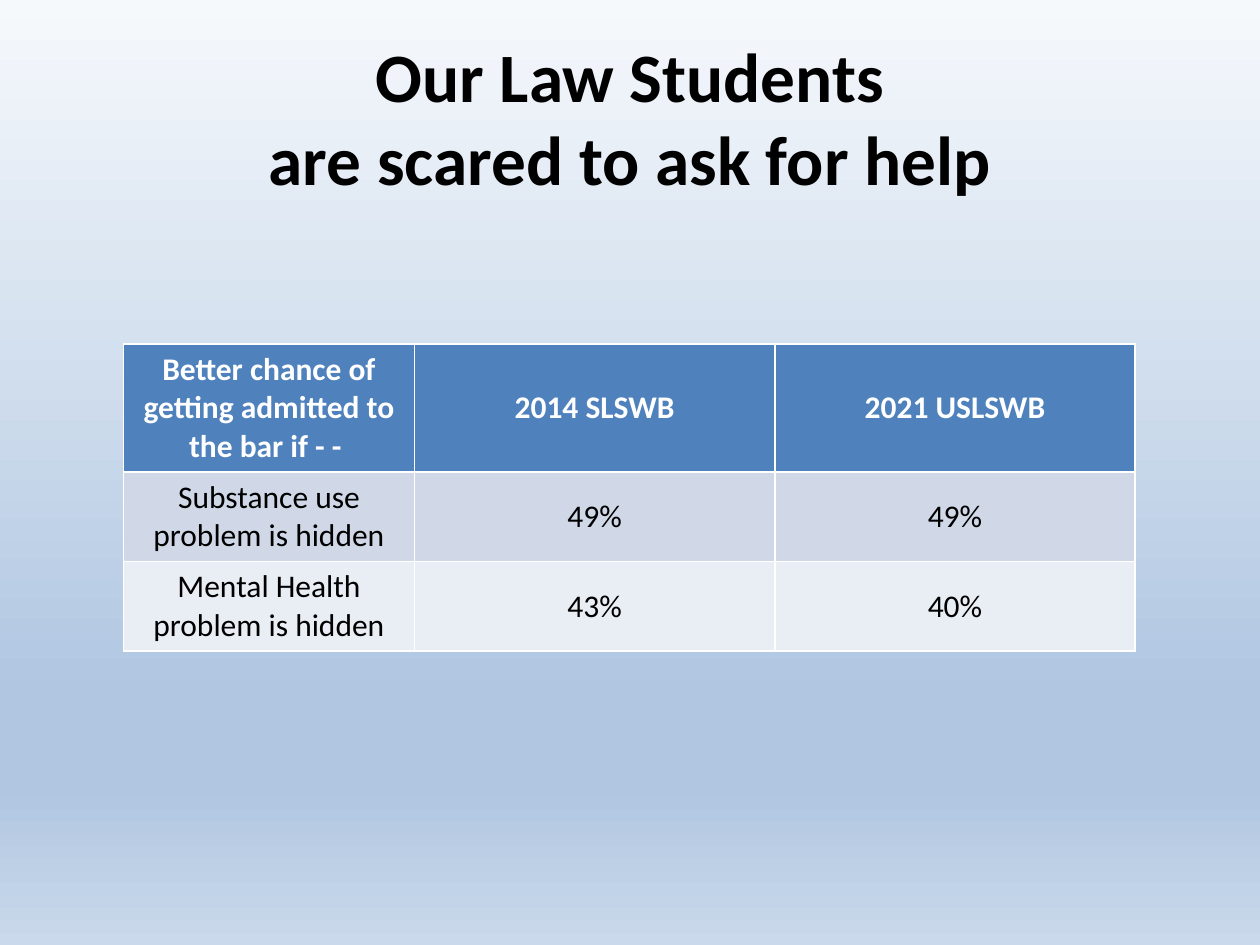
from lxml import etree
from pptx import Presentation
from pptx.dml.color import RGBColor
from pptx.enum import text
from pptx.oxml.ns import qn
from pptx.util import Inches, Pt

TITLE = "Our Law Students\vare scared to ask for help"
ROWS = [
    ("Better chance of getting admitted to the bar if - - ", "2014 SLSWB", "2021 USLSWB"),
    ("Substance use problem is hidden", "49%", "49%"),
    ("Mental Health problem is hidden", "43%", "40%"),
]
COL_WIDTHS = (2.31, 2.86, 2.86)
ROW_HEIGHT = 0.69

BLACK = RGBColor(0x00, 0x00, 0x00)
WHITE = RGBColor(0xFF, 0xFF, 0xFF)
ROW_FILLS = (
    RGBColor(0x4F, 0x81, 0xBD),
    RGBColor(0xD0, 0xD8, 0xE8),
    RGBColor(0xE9, 0xED, 0xF4),
)
SKY_TOP = RGBColor(0xF6, 0xF9, 0xFC)
SKY_MIDDLE = RGBColor(0xB0, 0xC6, 0xE1)
SKY_BOTTOM = RGBColor(0xCA, 0xD9, 0xEB)
SKY_STOPS = ((0, SKY_TOP), (74, SKY_MIDDLE), (83, SKY_MIDDLE), (100, SKY_BOTTOM))


def style(p, size, color, bold):
    p.alignment = text.PP_ALIGN.CENTER
    p.font.name = "Calibri"
    p.font.size = Pt(size)
    p.font.bold = bold
    p.font.color.rgb = color


def paint_background(s):
    fill = s.background.fill
    fill.gradient()
    fill.gradient_angle = 270
    stops = next(s.element.iter(qn("a:gsLst")))
    for stop in list(stops):
        stops.remove(stop)
    for percent, color in SKY_STOPS:
        stop = etree.SubElement(stops, qn("a:gs"), pos=str(percent * 1000))
        etree.SubElement(stop, qn("a:srgbClr"), val=str(color))


def add_title(s):
    sp = s.shapes.title
    sp.left, sp.top, sp.width, sp.height = map(Inches, (0.5, 0.3, 9, 1.25))
    tf = sp.text_frame
    tf.text = TITLE
    tf.auto_size = text.MSO_AUTO_SIZE.NONE
    tf.vertical_anchor = text.MSO_ANCHOR.MIDDLE
    style(tf.paragraphs[0], 39.6, BLACK, True)


def add_survey_table(s):
    table = s.shapes.add_table(
        len(ROWS), len(COL_WIDTHS), Inches(0.98), Inches(2.73),
        Inches(sum(COL_WIDTHS)), Inches(ROW_HEIGHT * len(ROWS)),
    ).table
    for column, width in zip(table.columns, COL_WIDTHS):
        column.width = Inches(width)
    for i, (row, values) in enumerate(zip(table.rows, ROWS)):
        row.height = Inches(ROW_HEIGHT)
        header = i == 0
        for cell, value in zip(row.cells, values):
            cell.text = value
            cell.vertical_anchor = text.MSO_ANCHOR.MIDDLE
            cell.fill.solid()
            cell.fill.fore_color.rgb = ROW_FILLS[i]
            style(cell.text_frame.paragraphs[0], 18, WHITE if header else BLACK, header)


def main():
    prs = Presentation()
    prs.slide_width, prs.slide_height = Inches(10), Inches(7.5)
    s = prs.slides.add_slide(prs.slide_layouts[5])
    paint_background(s)
    add_title(s)
    add_survey_table(s)
    prs.save("out.pptx")


if __name__ == "__main__":
    main()
